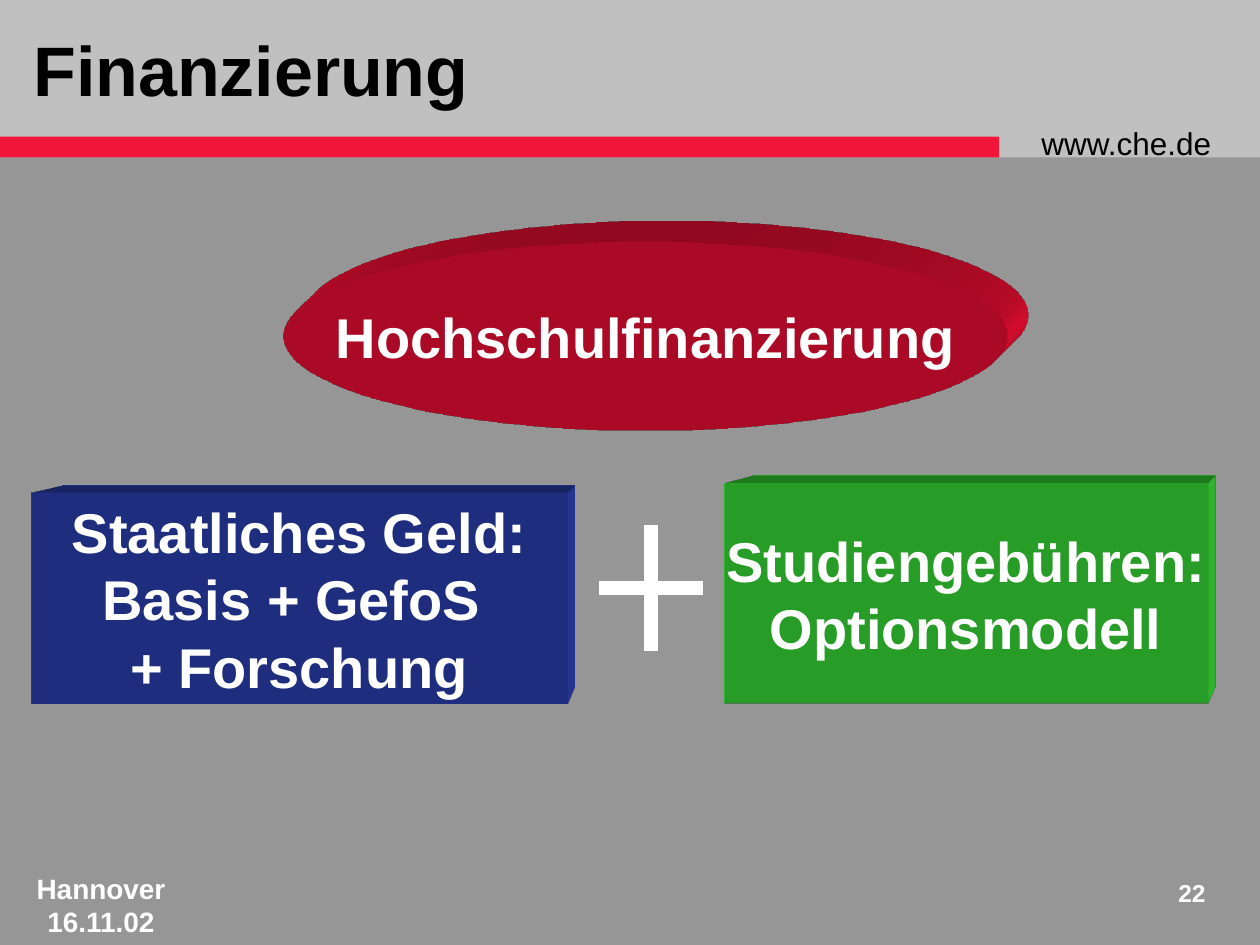
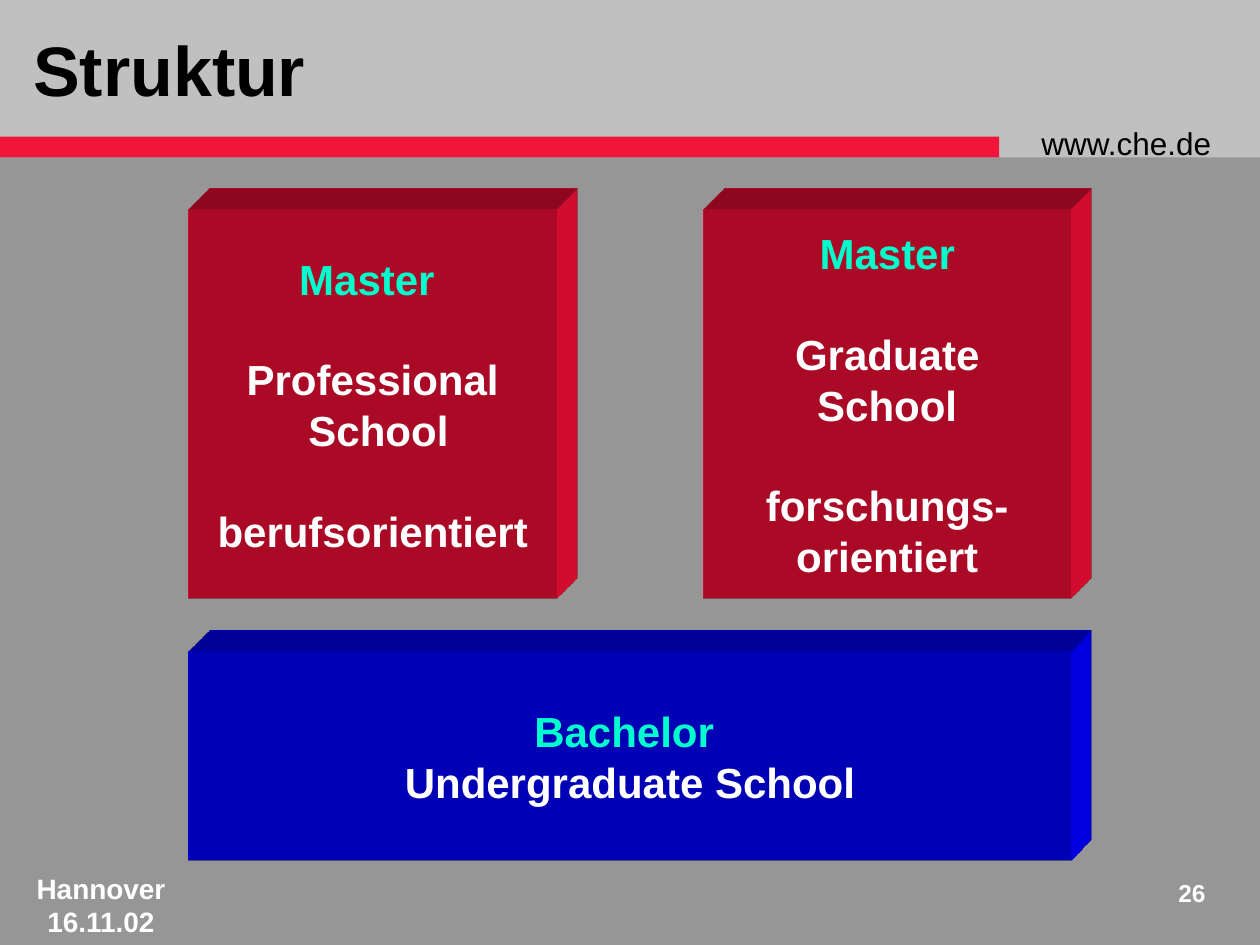
from lxml import etree
from pptx import Presentation
from pptx.dml.color import RGBColor
from pptx.enum.shapes import MSO_CONNECTOR, MSO_SHAPE
from pptx.enum.text import MSO_ANCHOR, PP_ALIGN
from pptx.oxml.ns import qn
from pptx.util import Pt

LEFT, CENTER, RIGHT = PP_ALIGN.LEFT, PP_ALIGN.CENTER, PP_ALIGN.RIGHT
TOP, MIDDLE = MSO_ANCHOR.TOP, MSO_ANCHOR.MIDDLE
RECTANGLE, OVAL = MSO_SHAPE.RECTANGLE, MSO_SHAPE.OVAL
STRAIGHT = MSO_CONNECTOR.STRAIGHT

FONT = "Arial"
BACKGROUND = RGBColor(0x96, 0x96, 0x96)
HEADER = RGBColor(0xC0, 0xC0, 0xC0)
STRIPE = RGBColor(0xF1, 0x15, 0x3A)
RED = RGBColor(0xF0, 0x0E, 0x34)
NAVY = RGBColor(0x29, 0x3B, 0xA5)
GREEN = RGBColor(0x33, 0xCC, 0x33)
BLUE = RGBColor(0x00, 0x00, 0xFF)
MINT = RGBColor(0x00, 0xFF, 0xCC)
WHITE = RGBColor(0xFF, 0xFF, 0xFF)
BLACK = RGBColor(0x00, 0x00, 0x00)

# Content: areas are left, top, width, height in points
WEBSITE = "www.che.de"
EVENT = ["Hannover", "16.11.02"]

FUNDING_TOTAL = ("Hochschulfinanzierung", (162, 138, 414, 108))
FUNDING_SOURCES = [
    (["Staatliches Geld:", "Basis + GefoS ", "+ Forschung"],
     (18, 282, 306, 120), NAVY),
    (["Studiengebühren:", "Optionsmodell"], (414, 276, 276, 126), GREEN),
]
PLUS_CENTER, PLUS_WIDTH, PLUS_HEIGHT = (372, 336), 60, 72

# Degree, groups of lines, area, colour
DEGREES = [
    ("Bachelor ", [["Undergraduate School"]], (108, 372, 504, 120), BLUE),
    ("Master ", [["Professional", " School"], ["berufsorientiert"]],
     (108, 120, 210, 222), RED),
    ("Master", [["Graduate", "School"], ["forschungs-", "orientiert"]],
     (402, 120, 210, 222), RED),
]
GROUP_GAP = 28.8
DEPTH = Pt(33.87)
OBLIQUE, PERSPECTIVE = "legacyObliqueTopRight", "legacyPerspectiveTopRight"


def add_text(frame, lines, size, color=WHITE, bold=True, align=CENTER,
             anchor=MIDDLE, wrap=False, gaps=(), first_color=None):
    """Write lines; gaps holds the indexes of lines that start a new group."""
    frame.word_wrap = wrap
    frame.vertical_anchor = anchor
    for index, line in enumerate(lines):
        paragraph = frame.paragraphs[0] if index == 0 else frame.add_paragraph()
        paragraph.alignment = align
        if index in gaps:
            paragraph.space_before = Pt(GROUP_GAP)
        run = paragraph.add_run()
        run.text = line
        font = run.font
        font.name, font.size, font.bold = FONT, Pt(size), bold
        font.color.rgb = first_color if first_color and index == 0 else color


def add_label(slide, area, lines, size, **text_format):
    box = slide.shapes.add_textbox(*map(Pt, area))
    add_text(box.text_frame, lines, size, wrap=True, **text_format)


def add_face(slide, kind, area, color):
    face = slide.shapes.add_shape(kind, *map(Pt, area))
    face.shadow.inherit = False
    face.line.fill.background()
    face.fill.solid()
    face.fill.fore_color.rgb = color
    return face


def add_block(slide, kind, area, color, camera=OBLIQUE):
    """Add a shape extruded towards the top right."""
    block = add_face(slide, kind, area, color)
    properties = block._element.spPr
    scene = etree.SubElement(properties, qn("a:scene3d"))
    etree.SubElement(scene, qn("a:camera"), prst=camera)
    etree.SubElement(scene, qn("a:lightRig"), rig="legacyFlat3", dir="b")
    solid = etree.SubElement(properties, qn("a:sp3d"), extrusionH=str(int(DEPTH)),
                             prstMaterial="legacyMatte")
    for bevel in ("a:bevelT", "a:bevelB"):
        etree.SubElement(solid, qn(bevel), w="13500", h="13500", prst="angle")
    side = etree.SubElement(solid, qn("a:extrusionClr"))
    etree.SubElement(side, qn("a:srgbClr"), val=str(color))
    return block


def add_stroke(slide, start, end):
    stroke = slide.shapes.add_connector(STRAIGHT, *map(Pt, start + end))
    stroke.line.color.rgb = WHITE
    stroke.line.width = Pt(8)
    etree.SubElement(stroke._element.spPr, qn("a:effectLst"))


def add_page(deck, title, number):
    slide = deck.slides.add_slide(deck.slide_layouts[6])
    slide.background.fill.solid()
    slide.background.fill.fore_color.rgb = BACKGROUND
    # Header band, stripe and footer
    add_face(slide, RECTANGLE, (0, 0, 720, 90), HEADER)
    add_face(slide, RECTANGLE, (0, 78, 571, 12), STRIPE)
    add_label(slide, (588, 67.5, 126, 29), [WEBSITE], 18, color=BLACK,
              bold=False, align=LEFT, anchor=TOP)
    add_label(slide, (12, 494, 91.5, 46), EVENT, 16)
    add_label(slide, (654, 498, 42, 30), [str(number)], 14,
              align=RIGHT, anchor=TOP)
    add_label(slide, (12, 0, 582, 78), [title], 40, color=BLACK, align=LEFT)
    return slide


def build_funding(deck):
    slide = add_page(deck, "Finanzierung", 22)
    total, area = FUNDING_TOTAL
    add_text(add_block(slide, OVAL, area, RED).text_frame, [total], 32)
    for lines, area, color in FUNDING_SOURCES:
        source = add_block(slide, RECTANGLE, area, color, PERSPECTIVE)
        add_text(source.text_frame, lines, 32)
    # Plus sign between the two sources
    x, y = PLUS_CENTER
    add_stroke(slide, (x - PLUS_WIDTH / 2, y), (x + PLUS_WIDTH / 2, y))
    add_stroke(slide, (x, y - PLUS_HEIGHT / 2), (x, y + PLUS_HEIGHT / 2))


def build_structure(deck):
    slide = add_page(deck, "Struktur", 26)
    for degree, groups, area, color in DEGREES:
        lines, gaps = [degree], []
        for group in groups:
            if len(groups) > 1:
                gaps.append(len(lines))
            lines += group
        school = add_block(slide, RECTANGLE, area, color)
        add_text(school.text_frame, lines, 24, gaps=gaps, first_color=MINT)


def main():
    deck = Presentation()
    deck.slide_width, deck.slide_height = Pt(720), Pt(540)
    build_funding(deck)
    build_structure(deck)
    deck.save("out.pptx")


if __name__ == "__main__":
    main()
